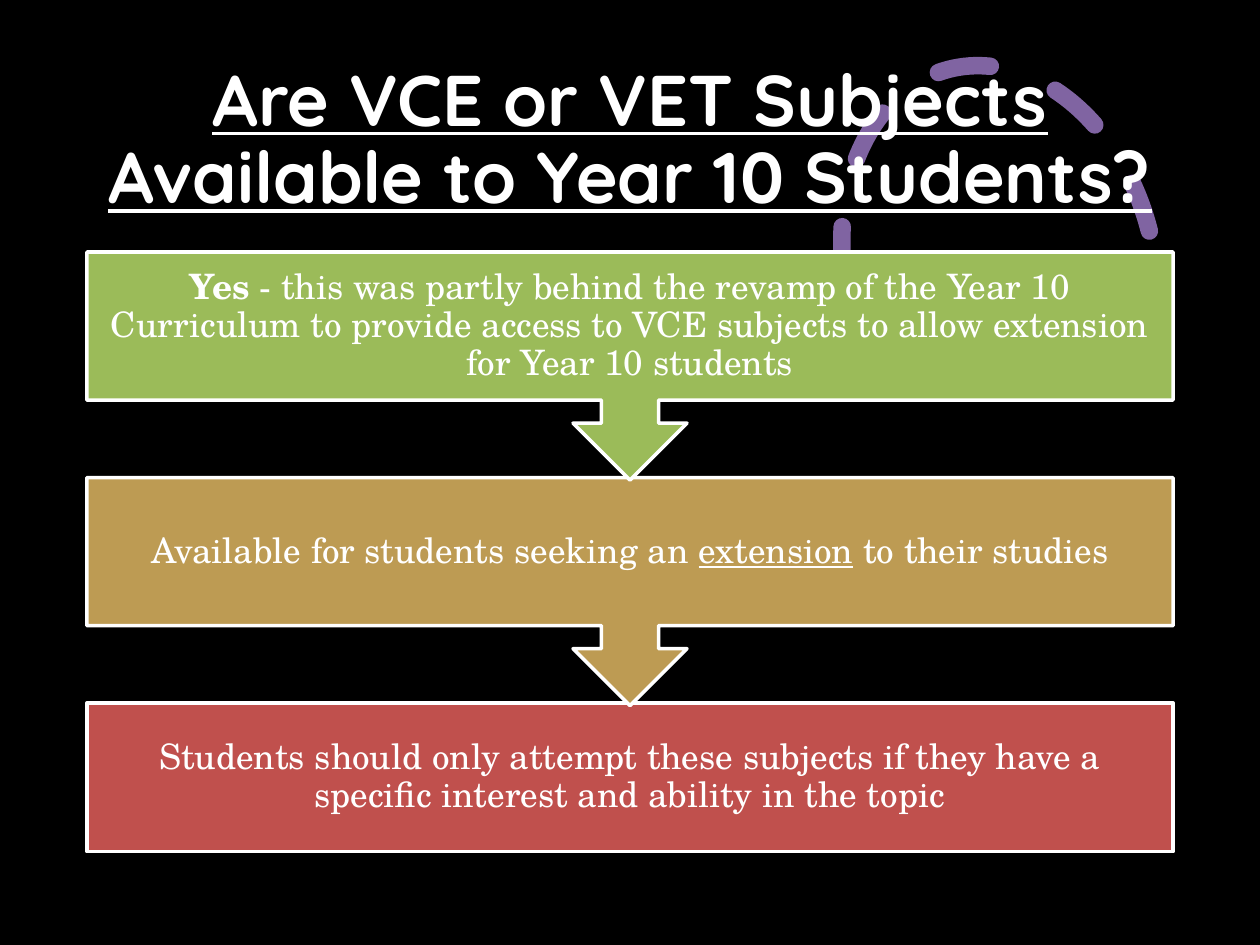
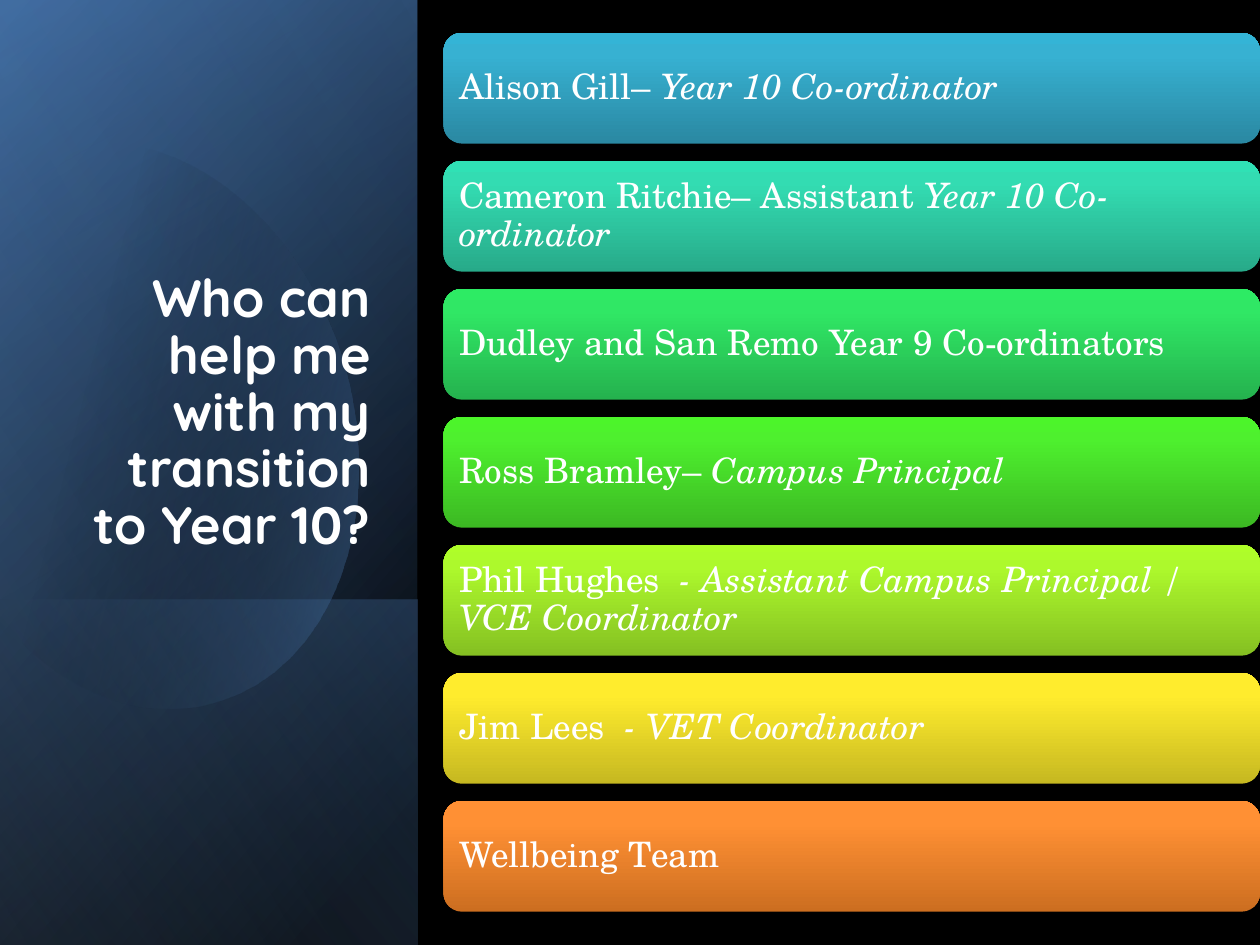
from dataclasses import dataclass

from lxml import etree
from pptx import Presentation
from pptx.dml.color import RGBColor
from pptx.enum.dml import MSO_LINE
from pptx.enum.shapes import MSO_SHAPE
from pptx.enum.text import MSO_ANCHOR, PP_ALIGN
from pptx.oxml.ns import qn
from pptx.util import Emu, Inches, Pt

RECTANGLE, ROUNDED = MSO_SHAPE.RECTANGLE, MSO_SHAPE.ROUNDED_RECTANGLE
CALLOUT, ARC = MSO_SHAPE.UP_ARROW_CALLOUT, MSO_SHAPE.ARC
DASH = MSO_LINE.DASH
MIDDLE, BOTTOM = MSO_ANCHOR.MIDDLE, MSO_ANCHOR.BOTTOM
LEFT, CENTER, RIGHT = PP_ALIGN.LEFT, PP_ALIGN.CENTER, PP_ALIGN.RIGHT

# Shared look
SLIDE_WIDTH, SLIDE_HEIGHT = Inches(10), Inches(7.5)
COLUMNS, ROWS = 100, 75
TITLE_FONT, BODY_FONT = "Quicksand", "TeX Gyre Schola"
BODY_SIZE = 20
COLOURS = {
    "black": "000000", "white": "FFFFFF", "purple": "8064A2",
    "red": "C0504D", "tan": "BD9B53", "green": "9BBB59",
    "navy": "376092", "blue": "4F81BD", "pale": "95B3D7",
}


@dataclass(frozen=True)
class Box:
    """A place on the grid, in columns and rows."""
    left: float
    top: float
    width: float
    height: float

    def lengths(self) -> tuple[Emu, Emu, Emu, Emu]:
        return (across(self.left), down(self.top),
                across(self.width), down(self.height))

    def turned(self) -> "Box":
        """The frame that fills this box once rotated by a quarter turn."""
        shift = (self.width - self.height) / 2
        return Box(self.left + shift, self.top - shift, self.height, self.width)


@dataclass(frozen=True)
class Span:
    text: str
    bold: bool | None = None
    italic: bool | None = None
    underline: bool | None = None


@dataclass(frozen=True)
class Style:
    font: str
    size: float
    align: PP_ALIGN
    anchor: MSO_ANCHOR = MIDDLE
    inset: tuple[float, float] = (0.1, 0.05)
    bold: bool = False
    underline: bool = False


@dataclass(frozen=True)
class Stop:
    position: int
    colour: str
    alpha: int = 100


@dataclass(frozen=True)
class Layer:
    box: Box
    angle: int
    stops: tuple[Stop, ...]


@dataclass(frozen=True)
class Step:
    colour: str
    spans: tuple[Span, ...]


@dataclass(frozen=True)
class Contact:
    shades: tuple[str, str, str]
    spans: tuple[Span, ...]


def across(columns: float) -> Emu:
    return Emu(round(SLIDE_WIDTH * columns / COLUMNS))


def down(rows: float) -> Emu:
    return Emu(round(SLIDE_HEIGHT * rows / ROWS))


def colour(name: str) -> RGBColor:
    return RGBColor.from_string(COLOURS[name])


# Drawing helpers
def add_page(deck):
    page = deck.slides.add_slide(deck.slide_layouts[6])
    page.background.fill.solid()
    page.background.fill.fore_color.rgb = colour("black")
    return page


def add_plain(page, kind, box: Box):
    shape = page.shapes.add_shape(kind, *box.lengths())
    shape.shadow.inherit = False
    shape.fill.background()
    shape.line.fill.background()
    return shape


def add_framed(page, kind, box: Box, fill: str):
    shape = add_plain(page, kind, box)
    shape.fill.solid()
    shape.fill.fore_color.rgb = colour(fill)
    shape.line.color.rgb = colour("white")
    shape.line.width = Pt(2)
    return shape


def fill_gradient(shape, stops: tuple[Stop, ...], angle: int) -> None:
    gradient = etree.Element(qn("a:gradFill"), rotWithShape="1")
    stop_list = etree.SubElement(gradient, qn("a:gsLst"))
    for stop in stops:
        mark = etree.SubElement(stop_list, qn("a:gs"), pos=str(stop.position * 1000))
        tint = etree.SubElement(mark, qn("a:srgbClr"),
                                val=COLOURS.get(stop.colour, stop.colour))
        if stop.alpha < 100:
            etree.SubElement(tint, qn("a:alpha"), val=str(stop.alpha * 1000))
    etree.SubElement(gradient, qn("a:lin"), ang=str(angle * 60000), scaled="0")
    properties = shape.element.spPr
    properties.replace(properties.find(qn("a:noFill")), gradient)


def write(shape, spans: tuple[Span, ...], style: Style) -> None:
    frame = shape.text_frame
    frame.word_wrap = True
    frame.vertical_anchor = style.anchor
    frame.margin_left = frame.margin_right = Inches(style.inset[0])
    frame.margin_top = frame.margin_bottom = Inches(style.inset[1])
    para = frame.paragraphs[0]
    para.alignment = style.align
    para.line_spacing = 0.9
    para.font.name = style.font
    para.font.size = Pt(style.size)
    para.font.bold = style.bold
    para.font.underline = style.underline
    para.font.color.rgb = colour("white")
    for span in spans:
        run = para.add_run()
        run.text = span.text
        # Shape styles set their own text colour, so each run names white
        run.font.color.rgb = colour("white")
        run.font.bold = span.bold
        run.font.italic = span.italic
        run.font.underline = span.underline


def add_text(page, box: Box, spans: tuple[Span, ...], style: Style) -> None:
    write(page.shapes.add_textbox(*box.lengths()), spans, style)


# Slide 1: steps joined by arrow callouts
STEP_STYLE = Style(BODY_FONT, BODY_SIZE, CENTER, inset=(0.16, 0.16))
STEP_LEFT, STEP_WIDTH, STEP_TOP, STEP_PITCH = 6.9, 86.2, 20, 17.9
STEP_HEIGHT, CALLOUT_HEIGHT = 11.8, 18.1
STEPS = (
    Step("green", (Span("Yes ", bold=True),
                   Span("- this was partly behind the revamp of the Year 10 Curriculum "
                        "to provide access to VCE subjects to allow extension for "
                        "Year 10 students"))),
    Step("tan", (Span("Available for students seeking an "),
                 Span("extension", underline=True), Span(" to their studies"))),
    Step("red", (Span("Students should only attempt these subjects if they have a "
                      "specific interest and ability in the topic"),)),
)


def build_subjects(deck) -> None:
    page = add_page(deck)
    # Dashed arc behind the title
    arc = add_plain(page, ARC, Box(67.1, 5, 24.5, 32.7))
    arc.rotation = 345.8
    arc.adjustments[0] = 146.13 * 0.6
    arc.adjustments[1] = 0
    arc.line.color.rgb = colour("purple")
    arc.line.width = Pt(10)
    arc.line.dash_style = DASH
    arc.line._ln.set("cap", "rnd")
    add_text(page, Box(6.9, 4, 86.2, 14.5),
             (Span("Are VCE or VET Subjects Available to Year 10 Students?"),),
             Style(TITLE_FONT, 41, CENTER, bold=True, underline=True))
    # The lowest step comes first so that each arrow tip overlaps the next step
    last = len(STEPS) - 1
    for index, step in reversed(list(enumerate(STEPS))):
        box = Box(STEP_LEFT, STEP_TOP + index * STEP_PITCH, STEP_WIDTH, STEP_HEIGHT)
        if index == last:
            write(add_framed(page, RECTANGLE, box, step.colour), step.spans, STEP_STYLE)
        else:
            outline = Box(box.left, box.top, box.width, CALLOUT_HEIGHT)
            add_framed(page, CALLOUT, outline, step.colour).rotation = 180
            add_text(page, box, step.spans, STEP_STYLE)


# Slide 2: shaded panel and list of contacts
PANEL = Box(0, 0, 33.1, 75)
PANEL_FOOT = Box(0, 47.6, 33.1, 27.4)
LAYERS_BELOW = (
    Layer(PANEL, 50, (Stop(8, "black"), Stop(100, "navy"))),
    Layer(PANEL, 30, (Stop(0, "black", 0), Stop(99, "blue", 46))),
    Layer(PANEL_FOOT, 130, (Stop(2, "blue", 29), Stop(100, "black", 30))),
)
LAYER_ABOVE = Layer(PANEL, 120, (Stop(0, "black", 0), Stop(99, "pale", 11)))

# Cubic curves of the glow, from its top round to the slide's left edge
GLOW_START = (9.6, 11.4)
GLOW_CURVES = (
    ((17.1, 12.2), (24.4, 19.2), (27.3, 29)),
    ((30.7, 41.2), (26.2, 53.1), (17.1, 55.7)),
    ((11.4, 57.4), (5.3, 55), (0.7, 50)),
    ((0.5, 49.8), (0.2, 49.4), (0, 49.2)),
    ((0, 37), (0, 26), (0, 14.2)),
    ((1.3, 13.2), (2.8, 12.3), (4.5, 11.8)),
    ((6.2, 11.3), (7.9, 11.2), GLOW_START),
)
CURVE_PARTS = 16

CONTACT_STYLE = Style(BODY_FONT, BODY_SIZE, LEFT, inset=(0.08, 0.08))
CONTACT_TOP, CONTACT_PITCH = 2.6, 10.16
CONTACTS = (
    Contact(("2A88A2", "37B1D2", "34B4D6"),
            (Span("Alison Gill– "), Span("Year 10 Co-ordinator", italic=True))),
    Contact(("27AA89", "33DCB2", "30E1B5"),
            (Span("Cameron Ritchie– Assistant "),
             Span("Year 10 Co-ordinator", italic=True))),
    Contact(("25B24E", "30E765", "2DEB64"),
            (Span("Dudley and San Remo Year 9 Co-ordinators"),)),
    Contact(("3CB923", "4EF02E", "4CF52A"),
            (Span("Ross Bramley– "), Span("Campus Principal", italic=True))),
    Contact(("85C022", "ADF92C", "AFFE28"),
            (Span("Phil Hughes  "),
             Span("- Assistant Campus Principal / VCE Coordinator", italic=True))),
    Contact(("C6B821", "FFEC2D", "FFED2E"),
            (Span("Jim Lees  "), Span("- VET Coordinator", italic=True))),
    Contact(("CC6E20", "FF9034", "FF9136"), (Span("Wellbeing Team"),)),
)


def add_layer(page, layer: Layer) -> None:
    shape = add_plain(page, RECTANGLE, layer.box.turned())
    shape.rotation = 90
    shape.element.spPr.find(qn("a:xfrm")).set("flipH", "1")
    fill_gradient(shape, layer.stops, layer.angle)


def add_glow(page) -> None:
    points, start = [], GLOW_START
    for first, second, end in GLOW_CURVES:
        for part in range(1, CURVE_PARTS + 1):
            t = part / CURVE_PARTS
            x, y = ((1 - t) ** 3 * a + 3 * t * (1 - t) ** 2 * b
                    + 3 * t ** 2 * (1 - t) * c + t ** 3 * d
                    for a, b, c, d in zip(start, first, second, end))
            points.append((across(x), down(y)))
        start = end
    builder = page.shapes.build_freeform(across(GLOW_START[0]), down(GLOW_START[1]))
    builder.add_line_segments(points, close=True)
    glow = builder.convert_to_shape()
    glow.shadow.inherit = False
    glow.fill.background()
    glow.line.fill.background()
    fill_gradient(glow, (Stop(29, "black", 0), Stop(100, "blue", 43)), 14)


def build_contacts(deck) -> None:
    page = add_page(deck)
    for layer in LAYERS_BELOW:
        add_layer(page, layer)
    add_glow(page)
    add_layer(page, LAYER_ABOVE)
    add_text(page, Box(4.8, 18.4, 25.6, 26.2),
             (Span("Who can help me with my transition to Year 10?"),),
             Style(TITLE_FONT, 30, RIGHT, BOTTOM, bold=True))
    for index, contact in enumerate(CONTACTS):
        box = Box(35.2, CONTACT_TOP + index * CONTACT_PITCH, 64.8, 8.8)
        row = add_plain(page, ROUNDED, box)
        stops = tuple(Stop(at, shade) for at, shade in zip((0, 80, 100), contact.shades))
        fill_gradient(row, stops, 270)
        write(row, contact.spans, CONTACT_STYLE)


def main() -> None:
    deck = Presentation()
    deck.slide_width, deck.slide_height = SLIDE_WIDTH, SLIDE_HEIGHT
    build_subjects(deck)
    build_contacts(deck)
    deck.save("out.pptx")


if __name__ == "__main__":
    main()
